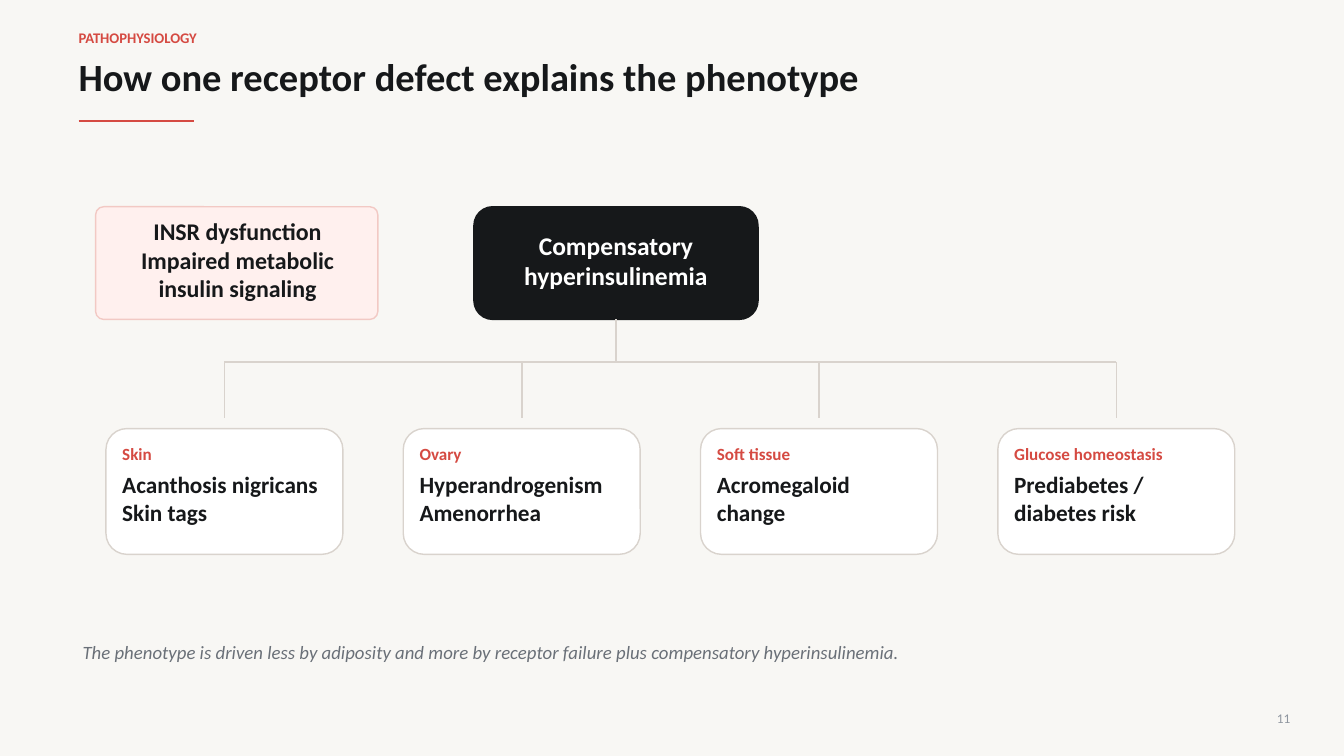
"""Build the slide that links one receptor defect to its phenotype."""
from lxml.etree import SubElement as Sub
from pptx import Presentation
from pptx.dml.color import RGBColor as Rgb
from pptx.enum.shapes import MSO_CONNECTOR as Link, MSO_SHAPE as Kind
from pptx.enum.text import MSO_ANCHOR as Anchor, MSO_AUTO_SIZE as Auto, PP_ALIGN as Align
from pptx.oxml.ns import qn
from pptx.util import Cm, Pt

HUES = {"page": "F8F7F4", "red": "D54A42", "ink": "16181A", "rule": "D9D3CD", "blush": "FFF0EE",
        "rose": "F2C9C4", "white": "FFFFFF", "grey": "6A7078", "pale": "8F969F"}

TITLE = "How one receptor defect explains the phenotype"
CARDS = [
    ("Skin", ["Acanthosis nigricans", "Skin tags"]),
    ("Ovary", ["Hyperandrogenism", "Amenorrhea"]),
    ("Soft tissue", ["Acromegaloid", "change"]),
    ("Glucose homeostasis", ["Prediabetes /", "diabetes risk"]),
]
STYLES = {
    "kicker": dict(size=10.5, hue="red", bold=True),
    "title": dict(size=27.5, hue="ink", bold=True),
    "cause": dict(size=17.1, hue="ink", bold=True, align=Align.CENTER),
    "hub": dict(size=18.2, hue="white", bold=True, align=Align.CENTER),
    "tag": dict(size=12.2, hue="red", bold=True),
    "body": dict(size=16.6, hue="ink", bold=True),
    "note": dict(size=13.4, hue="grey", italic=True),
    "number": dict(size=9.5, hue="pale", align=Align.RIGHT),
}
TEXTS = [
    ("kicker", ["PATHOPHYSIOLOGY"], (1.98, 0.71, 8.13, 0.46)),
    ("cause", ["INSR dysfunction", "Impaired metabolic insulin signaling"], (3, 5.84, 5.97, 1.4)),
    ("hub", ["Compensatory hyperinsulinemia"], (12.6, 6.2, 5.84, 0.71)),
    ("note", ["The phenotype is driven less by adiposity and more by receptor failure "
              "plus compensatory hyperinsulinemia."], (2.08, 16.1, 29.72, 0.64)),
    ("number", ["11"], (31.62, 17.86, 0.89, 0.46)),
]
LEFT, TOP, WIDE, HIGH, STEP = 2.67, 10.8, 5.97, 3.17, 7.49
INSET, BAR, END = 0.41, 9.12, 10.54

deck = Presentation()
deck.slide_width, deck.slide_height = Cm(33.86), Cm(19.05)
slide = deck.slides.add_slide(deck.slide_layouts[5])
shapes = slide.shapes


def tint(hue):
    return Rgb.from_string(HUES[hue])


def paint(fill, hue):
    fill.solid()
    fill.fore_color.rgb = tint(hue)


def write(shape, style, lines):
    look = dict(STYLES[style])
    size, hue, align = look.pop("size"), look.pop("hue"), look.pop("align", Align.LEFT)
    frame = shape.text_frame
    form = dict(word_wrap=True, auto_size=Auto.NONE, vertical_anchor=Anchor.MIDDLE,
                margin_left=0, margin_right=0, margin_top=0, margin_bottom=0)
    for key, value in form.items():
        setattr(frame, key, value)
    frame.text = "\n".join(lines)
    for para in frame.paragraphs:
        para.alignment = align
        font = para.runs[0].font
        for key, value in dict(look, name="Calibri", size=Pt(size)).items():
            setattr(font, key, value)
        font.color.rgb = tint(hue)


def text(style, lines, place):
    write(shapes.add_textbox(*map(Cm, place)), style, lines)


def box(place, fill, edge, curve=0.1667):
    shape = shapes.add_shape(Kind.ROUNDED_RECTANGLE, *map(Cm, place))
    shape.adjustments[0] = curve
    shape.shadow.inherit = False
    paint(shape.fill, fill)
    paint(shape.line.fill, edge)
    shape.line.width = Pt(1)
    return shape


def line(start, end, hue, width):
    stroke = shapes.add_connector(Link.STRAIGHT, *map(Cm, start + end))
    paint(stroke.line.fill, hue)
    stroke.line.width = Pt(width)
    Sub(stroke._element.spPr, qn("a:effectLst"))
    return stroke


paint(slide.background.fill, "page")
head = shapes.title
head.left, head.top, head.width, head.height = map(Cm, (1.98, 1.32, 21.59, 1.22))
write(head, "title", [TITLE])
line((1.98, 3.05), (4.9, 3.05), "red", 1.6)

box((2.41, 5.21, 7.11, 2.84), "blush", "rose", 0.071)
hub = box((11.94, 5.21, 7.16, 2.84), "ink", "ink")
stem = line((15.52, 8.05), (15.52, BAR), "rule", 1.4)
stem.begin_connect(hub, 2)

lefts = [LEFT + i * STEP for i in range(len(CARDS))]
mids = [left + WIDE / 2 for left in lefts]
line((mids[0], BAR), (mids[-1], BAR), "rule", 1.4)
for left, mid, (tag, body) in zip(lefts, mids, CARDS):
    line((mid, BAR), (mid, END), "rule", 1.2)
    box((left, TOP, WIDE, HIGH), "white", "rule")
    text("tag", [tag], (left + INSET, TOP + 0.4, 4.83, 0.46))
    text("body", body, (left + INSET, TOP + 1.06, 5.08, 1.4))

for item in TEXTS:
    text(*item)

deck.save("out.pptx")
